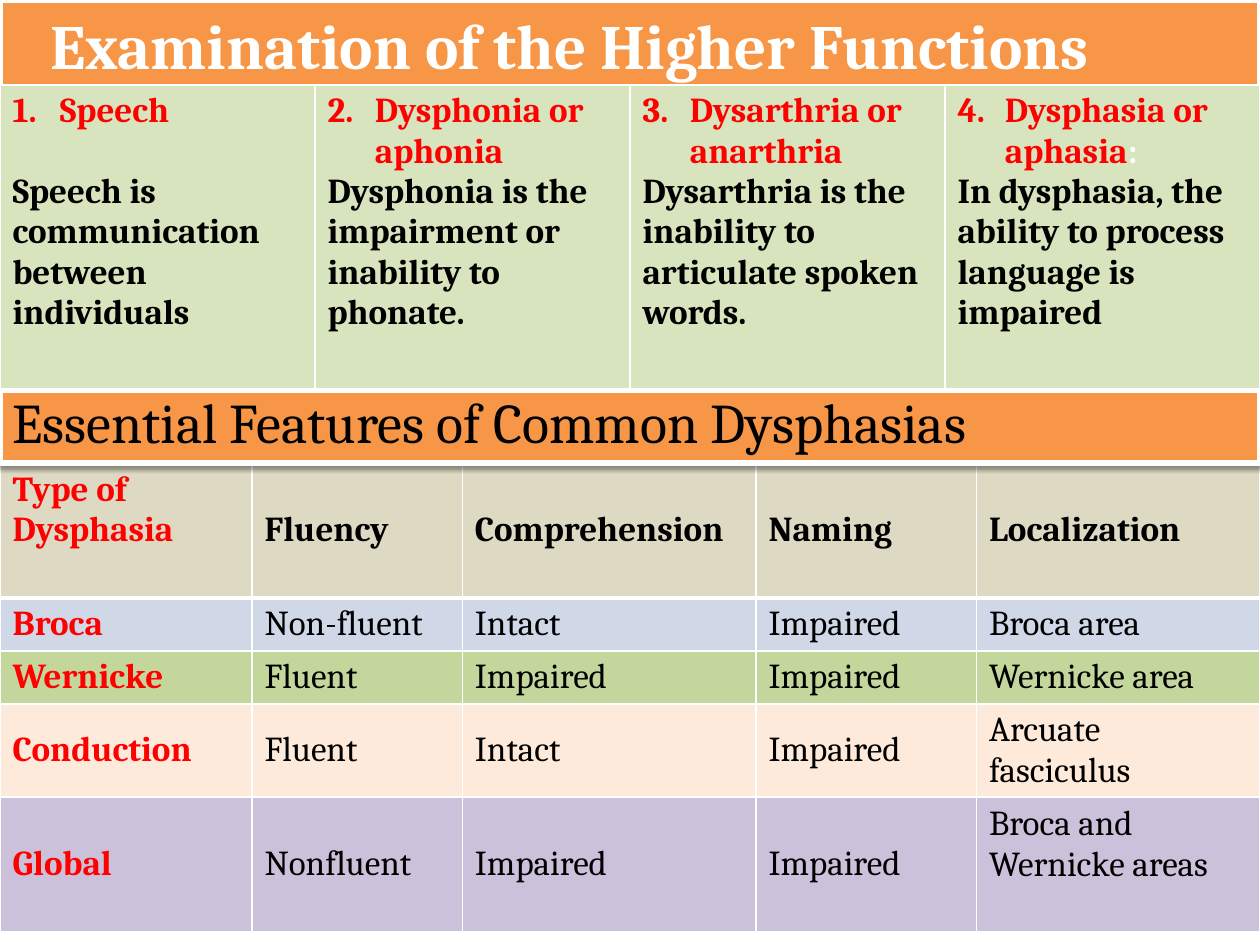
from collections import namedtuple
from dataclasses import dataclass

from lxml import etree
from pptx import Presentation
from pptx import util as u
from pptx.dml.color import RGBColor
from pptx.enum import shapes, text
from pptx.oxml import ns


@dataclass(frozen=True)
class Theme:
    font: str = "Cambria"
    body: int = 20
    head: int = 32
    title: int = 36
    gap: int = 23
    thin: float = 1
    thick: float = 3
    pad: float = 0.05
    band: str = "F79646"
    term: str = "D7E4BD"
    red: str = "FF0000"
    black: str = "000000"
    white: str = "FFFFFF"
    rows: tuple = ("DDD9C3", "D0D8E8", "C3D69B", "FDEADA", "CCC1DA")


LOOK = Theme()
Box = namedtuple("Box", "left top width height")
WIDE, HIGH = u.Inches(10), u.Inches(7.5)

TERMS = [
    ("Speech", "Speech is communication between individuals"),
    ("Dysphonia or aphonia", "Dysphonia is the impairment or inability to phonate."),
    ("Dysarthria or anarthria", "Dysarthria is the inability to articulate spoken words."),
    ("Dysphasia or aphasia", "In dysphasia, the ability to process language is impaired"),
]
TYPES = [
    ("Type of Dysphasia", "Fluency", "Comprehension", "Naming", "Localization"),
    ("Broca", "Non-fluent", "Intact", "Impaired", "Broca area"),
    ("Wernicke", "Fluent", "Impaired", "Impaired", "Wernicke area"),
    ("Conduction", "Fluent", "Intact", "Impaired", "Arcuate fasciculus"),
    ("Global", "Nonfluent", "Impaired", "Impaired", "Broca and Wernicke areas"),
]


def share(left, top, width, height):
    return Box(int(left * WIDE), int(top * HIGH), int(width * WIDE), int(height * HIGH))


def add(root, tag, **attrs):
    return etree.SubElement(root, ns.qn(tag), {k: str(v) for k, v in attrs.items()})


def style(para, size, color, bold=False):
    for run in para.runs:
        font = run.font
        font.name, font.size, font.bold = LOOK.font, u.Pt(size), bold
        font.color.rgb = RGBColor.from_string(color)


def paint(cell, color, low):
    props = cell._tc.get_or_add_tcPr()
    for side in "LRTB":
        wide = low if side == "B" else LOOK.thin
        line = add(props, f"a:ln{side}", w=u.Pt(wide))
        add(add(line, "a:solidFill"), "a:srgbClr", val=LOOK.white)
    cell.fill.solid()
    cell.fill.fore_color.rgb = RGBColor.from_string(color)


def grid(slide, box, cols, rows):
    table = slide.shapes.add_table(len(rows), len(cols), *box).table
    table.first_row = table.horz_banding = False
    for parts, sizes, full in ((table.columns, cols, box.width), (table.rows, rows, box.height)):
        for part, size in zip(parts, sizes):
            length = int(full * size / sum(sizes))
            if full == box.width:
                part.width = length
            else:
                part.height = length
    return table


def band(slide, box, words, size, color, inset, bold=False):
    shape = slide.shapes.add_shape(shapes.MSO_SHAPE.RECTANGLE, *box)
    shape.fill.solid()
    shape.fill.fore_color.rgb = RGBColor.from_string(LOOK.band)
    shape.line.color.rgb = RGBColor.from_string(LOOK.white)
    shape.line.width = u.Pt(LOOK.thick)
    shape.shadow.inherit = False
    glow = add(shape._element.spPr.find(ns.qn("a:effectLst")), "a:outerShdw",
               blurRad=u.Pt(3.1), dist=u.Pt(1.6), dir=5400000, rotWithShape=0)
    add(add(glow, "a:srgbClr", val=LOOK.black), "a:alpha", val=38000)
    frame = shape.text_frame
    frame.word_wrap = True
    frame.vertical_anchor = text.MSO_ANCHOR.TOP
    frame.margin_left = int(box.width * inset)
    frame.text = words
    para = frame.paragraphs[0]
    para.alignment = text.PP_ALIGN.LEFT
    style(para, size, color, bold)


def terms(slide, box):
    table = grid(slide, box, [1] * len(TERMS), [1])
    for i, (name, note) in enumerate(TERMS):
        cell = table.cell(0, i)
        paint(cell, LOOK.term, LOOK.thick)
        frame = cell.text_frame
        frame.text = f"{name}\n{note}"
        head, body = frame.paragraphs
        props = head._p.get_or_add_pPr()
        hang = int(box.width * 0.0375)
        props.set("marL", str(hang))
        props.set("indent", str(-hang))
        add(props, "a:buFont", typeface="+mj-lt")
        add(props, "a:buAutoNum", type="arabicPeriod", startAt=i + 1)
        style(head, LOOK.body, LOOK.red, True)
        style(body, LOOK.body, LOOK.black, True)
        if i == 0:
            body.space_before = u.Pt(LOOK.gap)
    colon = head.add_run()
    colon.text = ":"
    style(head, LOOK.body, LOOK.red, True)
    colon.font.color.rgb = RGBColor.from_string(LOOK.white)


def types(slide, box):
    table = grid(slide, box, [2, 1.67, 2.33, 1.75, 2.25], [1.07, 0.41, 0.42, 0.74, 1.07])
    for r, (line, fill) in enumerate(zip(TYPES, LOOK.rows)):
        for c, words in enumerate(line):
            cell = table.cell(r, c)
            paint(cell, fill, LOOK.thin if r else LOOK.thick)
            cell.vertical_anchor = text.MSO_ANCHOR.MIDDLE
            cell.text_frame.text = words
            color = LOOK.black if c else LOOK.red
            style(cell.text_frame.paragraphs[0], LOOK.body, color, r == 0 or c == 0)
    for r, c in ((0, 0), (len(TYPES) - 1, len(TYPES[0]) - 1)):
        table.cell(r, c).margin_bottom = u.Inches(LOOK.pad) + u.Pt(LOOK.gap)


def main():
    deck = Presentation()
    deck.slide_width, deck.slide_height = WIDE, HIGH
    slide = deck.slides.add_slide(deck.slide_layouts[6])
    types(slide, share(0, 0.49, 1, 0.49 + 0.005))
    band(slide, share(0, 0.404, 1, 0.086), "Essential Features of Common Dysphasias",
         LOOK.head, LOOK.black, 0.01)
    band(slide, share(0, 0, 1, 0.095), "Examination of the Higher Functions",
         LOOK.title, LOOK.white, 0.04, True)
    terms(slide, share(0, 0.09, 1, 0.323))
    deck.save("out.pptx")


if __name__ == "__main__":
    main()
